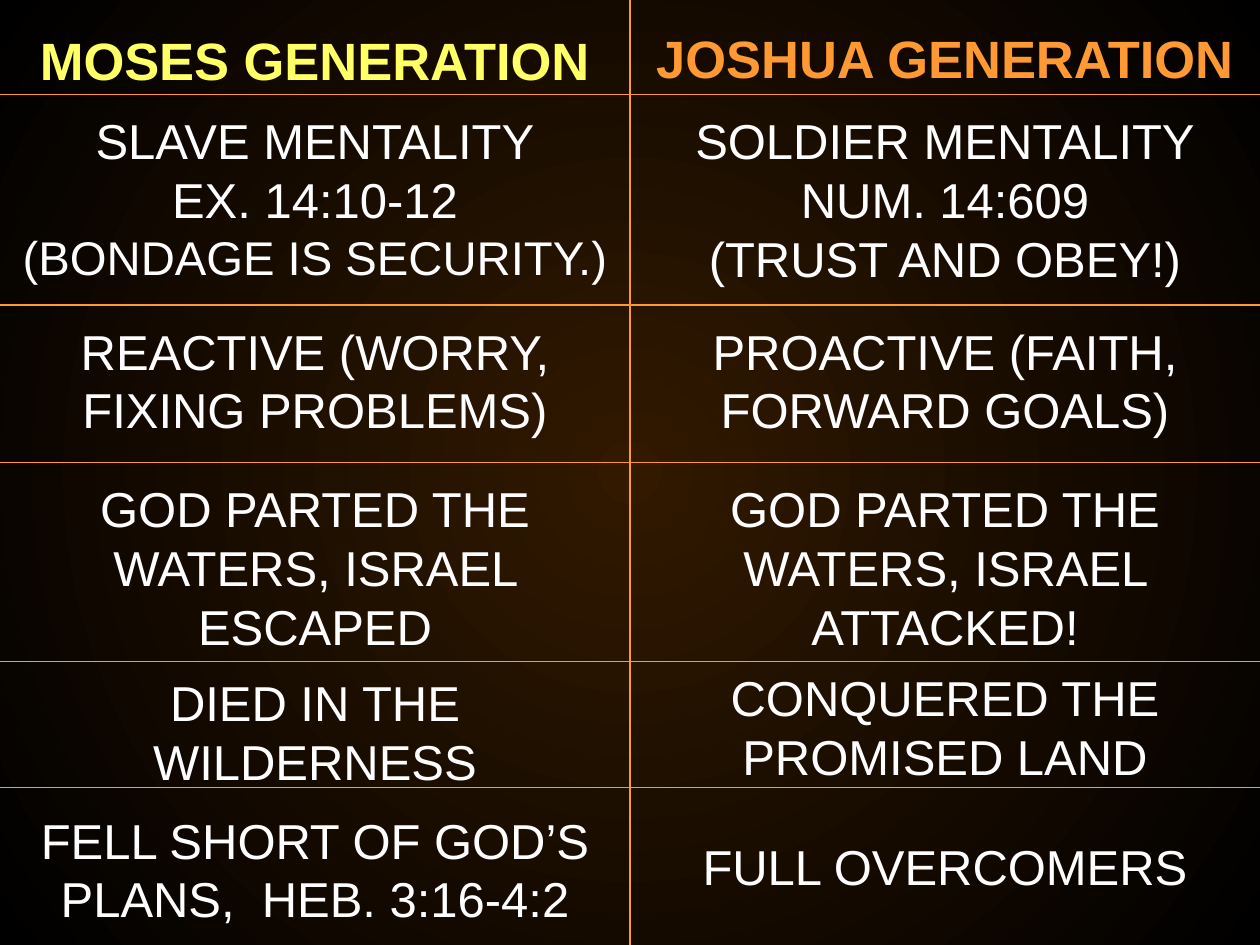
from dataclasses import dataclass

from lxml import etree
from pptx import Presentation
from pptx.dml.color import RGBColor
from pptx.enum.shapes import MSO_CONNECTOR
from pptx.enum.text import MSO_ANCHOR, MSO_AUTO_SIZE, PP_ALIGN
from pptx.oxml.ns import qn
from pptx.util import Inches, Pt

STRAIGHT = MSO_CONNECTOR.STRAIGHT
TOP = MSO_ANCHOR.TOP
GROW = MSO_AUTO_SIZE.SHAPE_TO_FIT_TEXT
CENTER = PP_ALIGN.CENTER

WIDTH, HEIGHT = 10, 7.5
COL_W = WIDTH / 2
FONT = "Arial"
ORANGE, YELLOW, WHITE = "FF9933", "FFFF66", "FFFFFF"
BROWN, BLACK = "321900", "000000"
RULES = [0.75, 2.42, 3.67, 5.25, 6.25]


@dataclass
class Heading:
    idx: int
    col: int
    top: float
    text: str
    color: str


@dataclass
class Cell:
    col: int
    top: float
    height: float
    lines: list[str]
    last_size: float = 28


HEADINGS = [
    Heading(1, 0, 0.17, "MOSES GENERATION", YELLOW),
    Heading(3, 1, 0.16, "JOSHUA GENERATION", ORANGE),
]

CELLS = [
    Cell(0, 0.83, 1.5, ["SLAVE MENTALITY", "EX. 14:10-12", "(BONDAGE IS SECURITY.)"], 27),
    Cell(1, 0.83, 1.51, ["SOLDIER MENTALITY", "NUM. 14:609", "(TRUST AND OBEY!)"]),
    Cell(0, 2.5, 1.04, ["REACTIVE (WORRY, FIXING PROBLEMS)"]),
    Cell(1, 2.5, 1.04, ["PROACTIVE (FAITH, FORWARD GOALS)"]),
    Cell(0, 3.75, 1.51, ["GOD PARTED THE WATERS, ISRAEL ESCAPED"]),
    Cell(1, 3.75, 1.51, ["GOD PARTED THE WATERS, ISRAEL ATTACKED!"]),
    Cell(0, 5.29, 1.04, ["DIED IN THE WILDERNESS"]),
    Cell(1, 5.25, 1.04, ["CONQUERED THE PROMISED LAND"]),
    Cell(0, 6.38, 1.04, ["FELL SHORT OF GOD’S PLANS,  HEB. 3:16-4:2"]),
    Cell(1, 6.59, 0.57, ["FULL OVERCOMERS"]),
]


def rgb(color: str) -> RGBColor:
    return RGBColor.from_string(color)


def set_background(s) -> None:
    fill = s.background.fill
    fill.gradient()
    for stop, color, pos in zip(fill.gradient_stops, (BROWN, BLACK), (0, 1)):
        stop.color.rgb = rgb(color)
        stop.position = pos
    grad = s.background._cSld.find(".//" + qn("a:gradFill"))
    grad.remove(grad.find(qn("a:lin")))
    shade = etree.SubElement(grad, qn("a:path"), path="circle")
    etree.SubElement(shade, qn("a:fillToRect"), l="50000", t="50000", r="50000", b="50000")


def add_rule(s, x1: float, y1: float, x2: float, y2: float) -> None:
    line = s.shapes.add_connector(STRAIGHT, Inches(x1), Inches(y1), Inches(x2), Inches(y2))
    line.line.color.rgb = rgb(ORANGE)
    line.line.width = Pt(0.75)
    etree.SubElement(line._element.spPr, qn("a:effectLst"))


def set_text(sp, lines: list[str], sizes: list[float], color: str, bold: bool) -> None:
    tf = sp.text_frame
    tf.text = "\n".join(lines)
    tf.word_wrap = True
    tf.auto_size = GROW
    tf.vertical_anchor = TOP
    for p, size in zip(tf.paragraphs, sizes):
        p.alignment = CENTER
        p.space_before = Pt(0)
        for r in p.runs:
            r.font.name = FONT
            r.font.size = Pt(size)
            r.font.bold = bold
            r.font.color.rgb = rgb(color)


def add_heading(s, heading: Heading) -> None:
    sp = next(ph for ph in s.placeholders if ph.placeholder_format.idx == heading.idx)
    sp.left, sp.top = Inches(heading.col * COL_W), Inches(heading.top)
    sp.width, sp.height = Inches(COL_W), Inches(0.61)
    set_text(sp, [heading.text], [30], heading.color, True)


def add_cell(s, cell: Cell) -> None:
    sp = s.shapes.add_textbox(
        Inches(cell.col * COL_W), Inches(cell.top), Inches(COL_W), Inches(cell.height)
    )
    sizes = [28] * (len(cell.lines) - 1) + [cell.last_size]
    set_text(sp, cell.lines, sizes, WHITE, False)


def main() -> None:
    prs = Presentation()
    prs.slide_width, prs.slide_height = Inches(WIDTH), Inches(HEIGHT)
    s = prs.slides.add_slide(prs.slide_layouts.get_by_name("Comparison"))
    set_background(s)
    for heading in HEADINGS:
        add_heading(s, heading)
    for ph in list(s.placeholders):
        if not ph.text_frame.text:
            ph._element.getparent().remove(ph._element)
    add_rule(s, COL_W, 0, COL_W, HEIGHT)
    for y in RULES:
        add_rule(s, 0, y, WIDTH, y)
    for cell in CELLS:
        add_cell(s, cell)
    prs.save("out.pptx")


if __name__ == "__main__":
    main()
